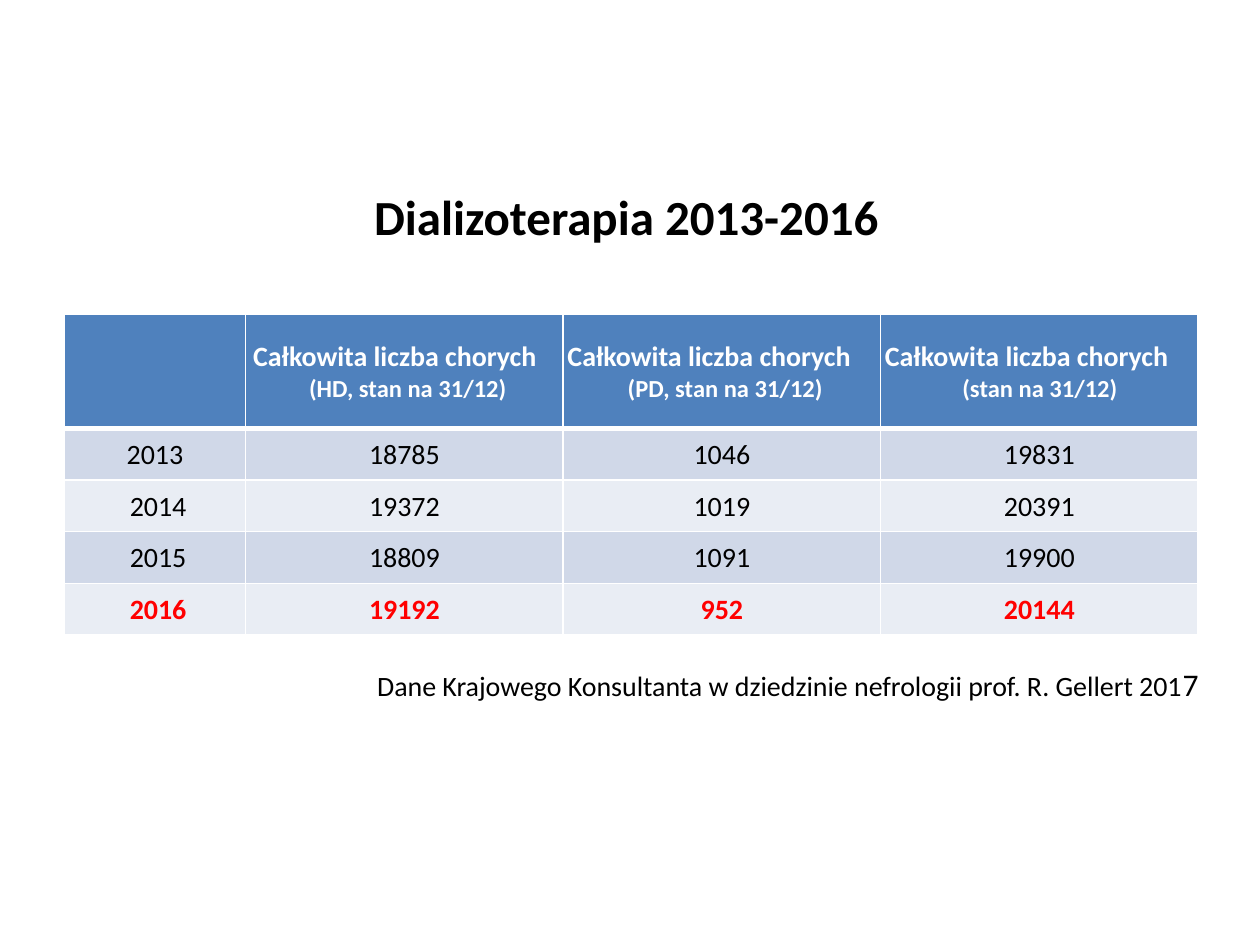
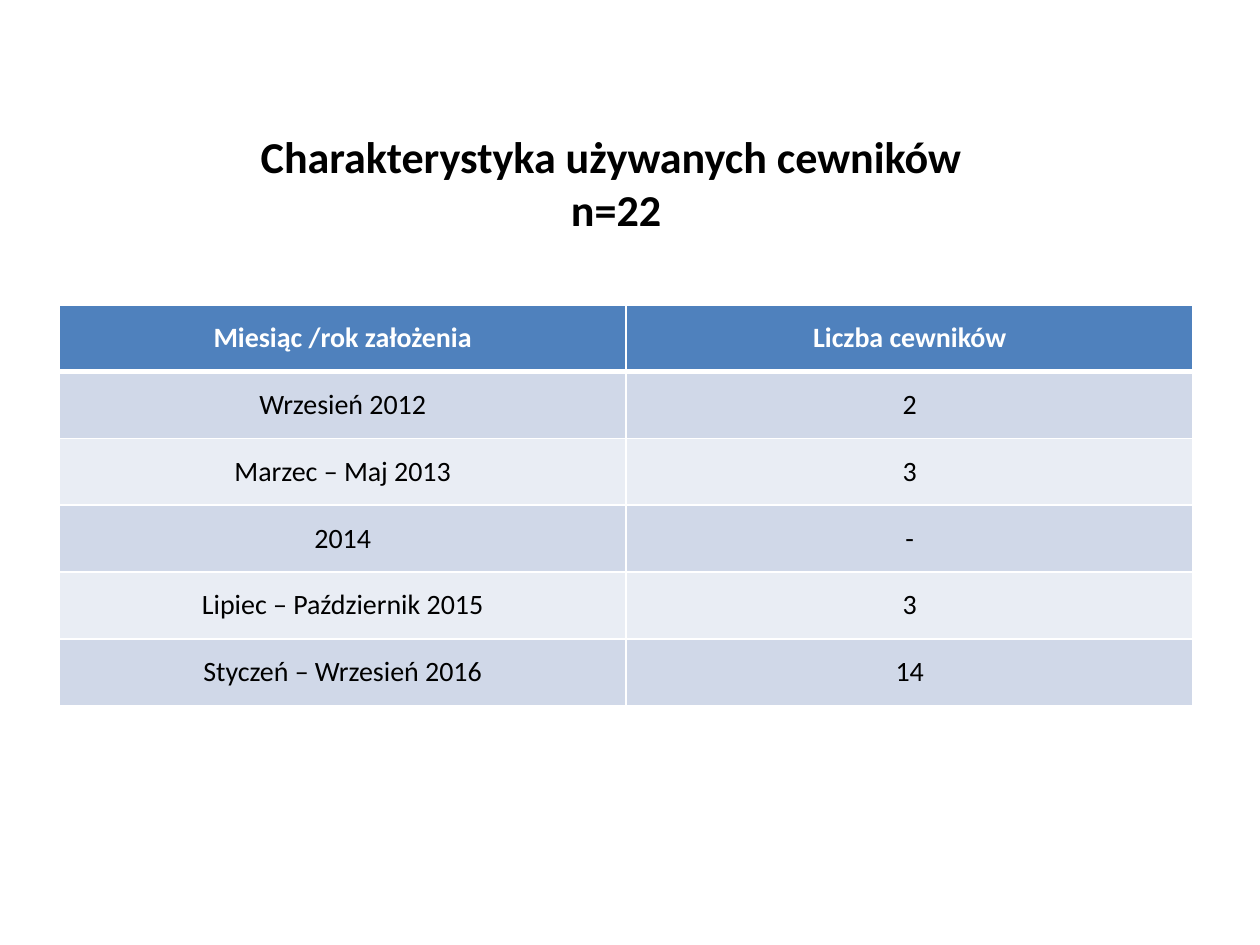
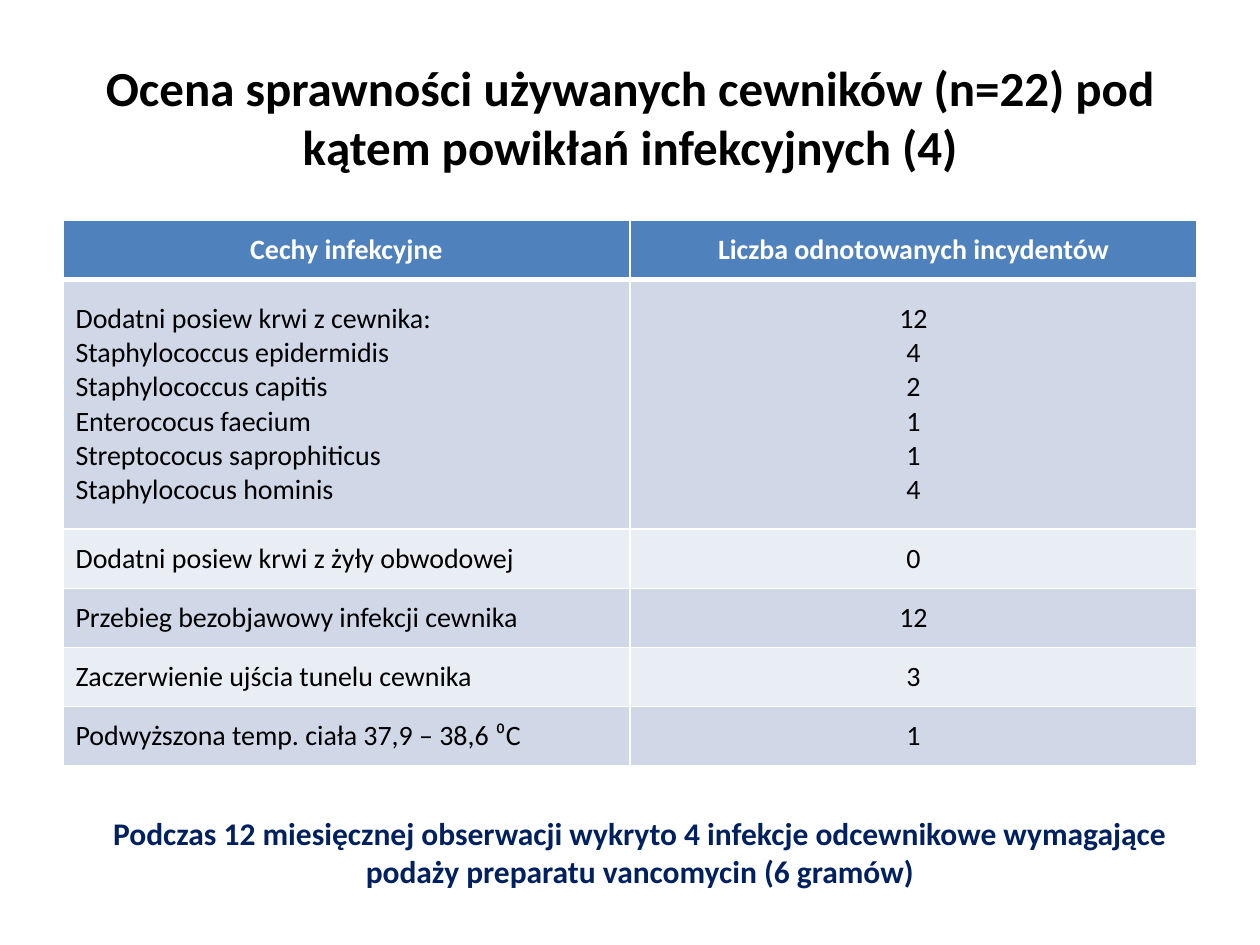
from dataclasses import dataclass
from typing import Any, Optional

from lxml import etree
from pptx import Presentation
from pptx import util as u
from pptx.dml.color import RGBColor
from pptx.enum import text
from pptx.oxml import ns

PX = u.Inches(1) // 100
FONT = "Calibri"
BLACK = RGBColor(0x00, 0x00, 0x00)
WHITE = RGBColor(0xFF, 0xFF, 0xFF)
RED = RGBColor(0xFF, 0x00, 0x00)
NAVY = RGBColor(0x00, 0x20, 0x60)
HEADER = RGBColor(0x4F, 0x81, 0xBD)
BANDS = (RGBColor(0xE9, 0xED, 0xF4), RGBColor(0xD0, 0xD8, 0xE8))
LEFT, CENTER, RIGHT = text.PP_ALIGN.LEFT, text.PP_ALIGN.CENTER, text.PP_ALIGN.RIGHT
TITLE_ONLY = 5


@dataclass
class Box:
    x: int
    y: int
    w: int
    h: int

    def emu(self) -> dict[str, int]:
        return dict(left=self.x * PX, top=self.y * PX, width=self.w * PX, height=self.h * PX)


@dataclass
class Run:
    words: str
    size: float = 16
    color: RGBColor = BLACK
    bold: bool = False


@dataclass
class Title:
    box: Box
    lines: tuple[str, ...]
    size: float = 28


@dataclass
class Note:
    box: Box
    runs: tuple[Run, ...]
    align: Any


@dataclass
class Grid:
    box: Box
    cols: tuple[int, ...]
    rows: tuple[int, ...]
    cells: list[tuple]
    label_align: Any = CENTER
    margins: tuple[int, int, int, int] = (10, 5, 10, 5)
    header_gaps: tuple[int, ...] = ()
    red_row: Optional[int] = None


@dataclass
class Page:
    title: Title
    grid: Grid
    note: Optional[Note] = None


def apply(target: Any, formats: dict[str, Any]) -> None:
    for name, value in formats.items():
        setattr(target, name, value)


def add_run(p: Any, run: Run) -> None:
    r = p.add_run()
    r.text = run.words
    apply(r.font, dict(name=FONT, size=u.Pt(run.size), bold=run.bold))
    r.font.color.rgb = run.color


def draw_title(s: Any, title: Title) -> None:
    sp = s.shapes.title
    apply(sp, title.box.emu())
    tf = sp.text_frame
    apply(tf, dict(word_wrap=True, auto_size=text.MSO_AUTO_SIZE.NONE,
                   vertical_anchor=text.MSO_ANCHOR.MIDDLE))
    p = tf.paragraphs[0]
    p.alignment = CENTER
    for i, line in enumerate(title.lines):
        if i:
            p.add_line_break()
        add_run(p, Run(line, title.size, bold=True))


def draw_note(s: Any, note: Note) -> None:
    tf = s.shapes.add_textbox(**note.box.emu()).text_frame
    apply(tf, dict(word_wrap=True, auto_size=text.MSO_AUTO_SIZE.SHAPE_TO_FIT_TEXT))
    p = tf.paragraphs[0]
    p.alignment = note.align
    for run in note.runs:
        add_run(p, run)


def draw_borders(cell: Any, row: int) -> None:
    tc_pr = cell._tc.get_or_add_tcPr()
    widths = dict(lnL=1, lnR=1, lnT=3 if row == 1 else 1, lnB=3 if row == 0 else 1)
    for tag, width in widths.items():
        ln = etree.SubElement(tc_pr, ns.qn(f"a:{tag}"), w=str(u.Pt(width)))
        fill = etree.SubElement(ln, ns.qn("a:solidFill"))
        etree.SubElement(fill, ns.qn("a:srgbClr"), val=str(WHITE))


def fill_cell(cell: Any, grid: Grid, row: int, col: int) -> None:
    header = row == 0
    draw_borders(cell, row)
    cell.fill.solid()
    cell.fill.fore_color.rgb = HEADER if header else BANDS[row % 2]
    sides = ("margin_left", "margin_top", "margin_right", "margin_bottom")
    apply(cell, {side: m * PX for side, m in zip(sides, grid.margins)})
    cell.vertical_anchor = text.MSO_ANCHOR.MIDDLE
    gap = grid.header_gaps[col] if header and grid.header_gaps else 0
    if gap:
        cell.margin_right = gap * PX
    red = row == grid.red_row
    color = WHITE if header else RED if red else BLACK
    content = grid.cells[row][col]
    lines = (content,) if isinstance(content, str) else content
    tf = cell.text_frame
    for i, line in enumerate(lines):
        p = tf.add_paragraph() if i else tf.paragraphs[0]
        p.alignment = CENTER if header or col else grid.label_align
        if i and gap:
            apply(p._p.get_or_add_pPr().attrib, {}) 
            p._p.get_or_add_pPr().set("marL", str(gap * PX))
        if line:
            add_run(p, Run(line, 14 if header and i else 16, color, header or red))


def draw_grid(s: Any, grid: Grid) -> None:
    table = s.shapes.add_table(len(grid.rows), len(grid.cols), **grid.box.emu()).table
    for column, width in zip(table.columns, grid.cols):
        column.width = width * PX
    for row, height in enumerate(grid.rows):
        table.rows[row].height = height * PX
        for col in range(len(grid.cols)):
            fill_cell(table.cell(row, col), grid, row, col)


PAGES = (
    Page(
        Title(Box(47, 109, 900, 125), ("Dializoterapia 2013-2016",)),
        Grid(
            Box(51, 249, 900, 254), (144, 252, 252, 252), (91,) + (41,) * 4,
            [
                ("",
                 ("Całkowita liczba chorych", " (HD, stan na 31/12)"),
                 ("Całkowita liczba chorych", " (PD, stan na 31/12)"),
                 ("Całkowita liczba chorych", "(stan na 31/12)")),
                ("2013", "18785", "1046", "19831"),
                (" 2014", "19372", "1019", "20391"),
                (" 2015", "18809", "1091", "19900"),
                (" 2016", "19192", "952", "20144"),
            ],
            margins=(1, 1, 1, 0), header_gaps=(0, 16, 21, 21), red_row=4,
        ),
        Note(
            Box(94, 523, 867, 40),
            (Run("Dane Krajowego Konsultanta w dziedzinie nefrologii prof. R. Gellert 201"),
             Run("7", 18)),
            RIGHT,
        ),
    ),
    Page(
        Title(Box(39, 94, 900, 102), ("Charakterystyka używanych cewników ", "n=22"), 25.2),
        Grid(
            Box(47, 242, 900, 317), (450, 450), (53,) * 6,
            [
                ("Miesiąc /rok założenia", "Liczba cewników"),
                ("Wrzesień 2012", "2"),
                ("Marzec – Maj 2013", "3"),
                ("2014", "-"),
                ("Lipiec – Październik 2015", "3"),
                ("Styczeń – Wrzesień 2016", "14"),
            ],
        ),
    ),
    Page(
        Title(Box(50, 30, 900, 125),
              ("Ocena sprawności używanych cewników (n=22) pod kątem powikłań infekcyjnych (4)",)),
        Grid(
            Box(50, 175, 900, 434), (450, 450), (47, 198) + (47,) * 4,
            [
                ("Cechy infekcyjne", "Liczba odnotowanych incydentów"),
                (("Dodatni posiew krwi z cewnika:", "Staphylococcus epidermidis",
                  "Staphylococcus capitis", "Enterococus faecium",
                  "Streptococus saprophiticus", "Staphylococus hominis"),
                 ("12", "4", "2", "1", "1", "4")),
                ("Dodatni posiew krwi z żyły obwodowej", "0"),
                ("Przebieg bezobjawowy infekcji cewnika", "12"),
                ("Zaczerwienie ujścia tunelu cewnika", "3"),
                ("Podwyższona temp. ciała 37,9 – 38,6 ⁰C", "1"),
            ],
            label_align=LEFT,
        ),
        Note(
            Box(55, 641, 906, 71),
            (Run("Podczas 12 miesięcznej obserwacji wykryto 4 infekcje odcewnikowe wymagające "
                 "podaży preparatu vancomycin (6 gramów)", 18, NAVY, True),),
            CENTER,
        ),
    ),
)


def main() -> None:
    prs = Presentation()
    apply(prs, dict(slide_width=1000 * PX, slide_height=750 * PX))
    for page in PAGES:
        s = prs.slides.add_slide(prs.slide_layouts[TITLE_ONLY])
        draw_title(s, page.title)
        draw_grid(s, page.grid)
        if page.note:
            draw_note(s, page.note)
    prs.save("out.pptx")


if __name__ == "__main__":
    main()
